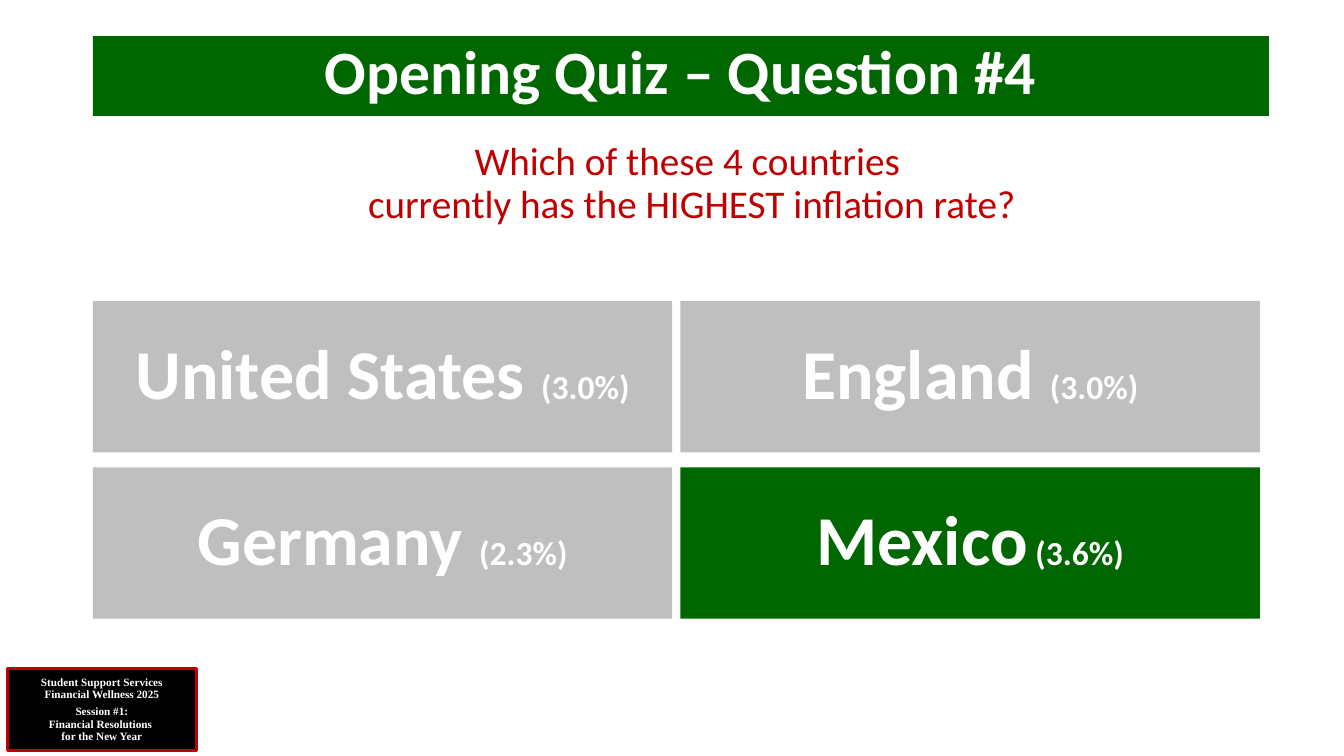
from pptx import Presentation
from pptx.dml.color import RGBColor
from pptx.enum.shapes import MSO_SHAPE
from pptx.enum.text import MSO_ANCHOR, PP_ALIGN
from pptx.util import Cm, Pt

RECT = MSO_SHAPE.RECTANGLE
TOP = MSO_ANCHOR.TOP
MIDDLE = MSO_ANCHOR.MIDDLE
CENTER = PP_ALIGN.CENTER

GREEN = RGBColor(0x00, 0x66, 0x00)
GRAY = RGBColor(0xBF, 0xBF, 0xBF)
RED = RGBColor(0xC0, 0x00, 0x00)
BLACK = RGBColor(0x00, 0x00, 0x00)
WHITE = RGBColor(0xFF, 0xFF, 0xFF)

SANS = "Calibri"
SERIF = "Times New Roman"
LEFT = 2.34
ANSWERS = [
    [("United States ", "(3.0%)", GRAY), ("England ", "(3.0%)", GRAY)],
    [("Germany ", "(2.3%)", GRAY), ("Mexico", " (3.6%)", GREEN)],
]


def add_run(para, text, size, color=WHITE, font=SANS, bold=True):
    """Add one styled run to a paragraph."""
    run = para.add_run()
    run.text = text
    run.font.name = font
    run.font.size = Pt(size)
    run.font.bold = bold
    run.font.color.rgb = color


def add_lines(para, lines, size, **style):
    """Add runs parted by line breaks."""
    for index, line in enumerate(lines):
        if index:
            para.add_line_break()
        add_run(para, line, size, **style)


def set_para(para, gap=0):
    """Center a paragraph with tight lines."""
    para.alignment = CENTER
    para.line_spacing = 0.9
    para.space_before = Pt(gap)
    return para


def add_box(slide, left, top, width, height, fill, anchor=MIDDLE):
    """Add a plain filled box and return it."""
    box = slide.shapes.add_shape(RECT, Cm(left), Cm(top), Cm(width), Cm(height))
    box.shadow.inherit = False
    box.fill.solid()
    box.fill.fore_color.rgb = fill
    box.line.fill.background()
    box.text_frame.word_wrap = True
    box.text_frame.vertical_anchor = anchor
    return box


def add_badge(slide):
    """Add the session badge in the corner."""
    badge = add_box(slide, 0.18, 16.84, 4.78, 2.08, BLACK)
    badge.line.color.rgb = RED
    badge.line.width = Pt(2.25)
    frame = badge.text_frame
    add_lines(set_para(frame.paragraphs[0]), ["Student Support Services"], 8, font=SERIF)
    add_lines(set_para(frame.add_paragraph()), ["Financial Wellness 2025"], 8, font=SERIF)
    session = ["Session #1:", "Financial Resolutions ", "for the New Year"]
    add_lines(set_para(frame.add_paragraph(), 4), session, 8, font=SERIF)


def add_title(slide):
    """Add the title band."""
    band = add_box(slide, LEFT, 0.91, 29.64, 2.01, GREEN, TOP)
    add_run(set_para(band.text_frame.paragraphs[0]), "Opening Quiz – Question #4", 44)


def add_query(slide):
    """Add the quiz question."""
    box = slide.shapes.add_textbox(Cm(LEFT), Cm(3.45), Cm(30.18), Cm(13.72))
    box.text_frame.word_wrap = True
    lines = ["Which of these 4 countries ", "currently has the HIGHEST inflation rate?"]
    para = set_para(box.text_frame.paragraphs[0])
    add_lines(para, lines, 28, color=RED, bold=False)


def add_answers(slide):
    """Add the grid of answers."""
    for row, answers in enumerate(ANSWERS):
        for col, (name, rate, fill) in enumerate(answers):
            left, top = LEFT + col * 14.81, 7.59 + row * 4.19
            box = add_box(slide, left, top, 14.6, 3.81, fill)
            para = set_para(box.text_frame.paragraphs[0])
            add_run(para, name, 50)
            add_run(para, rate, 24)


def main():
    """Build and save the quiz slide."""
    deck = Presentation()
    deck.slide_width, deck.slide_height = Cm(33.87), Cm(19.05)
    slide = deck.slides.add_slide(deck.slide_layouts[6])
    add_badge(slide)
    add_title(slide)
    add_query(slide)
    add_answers(slide)
    deck.save("out.pptx")


if __name__ == "__main__":
    main()
